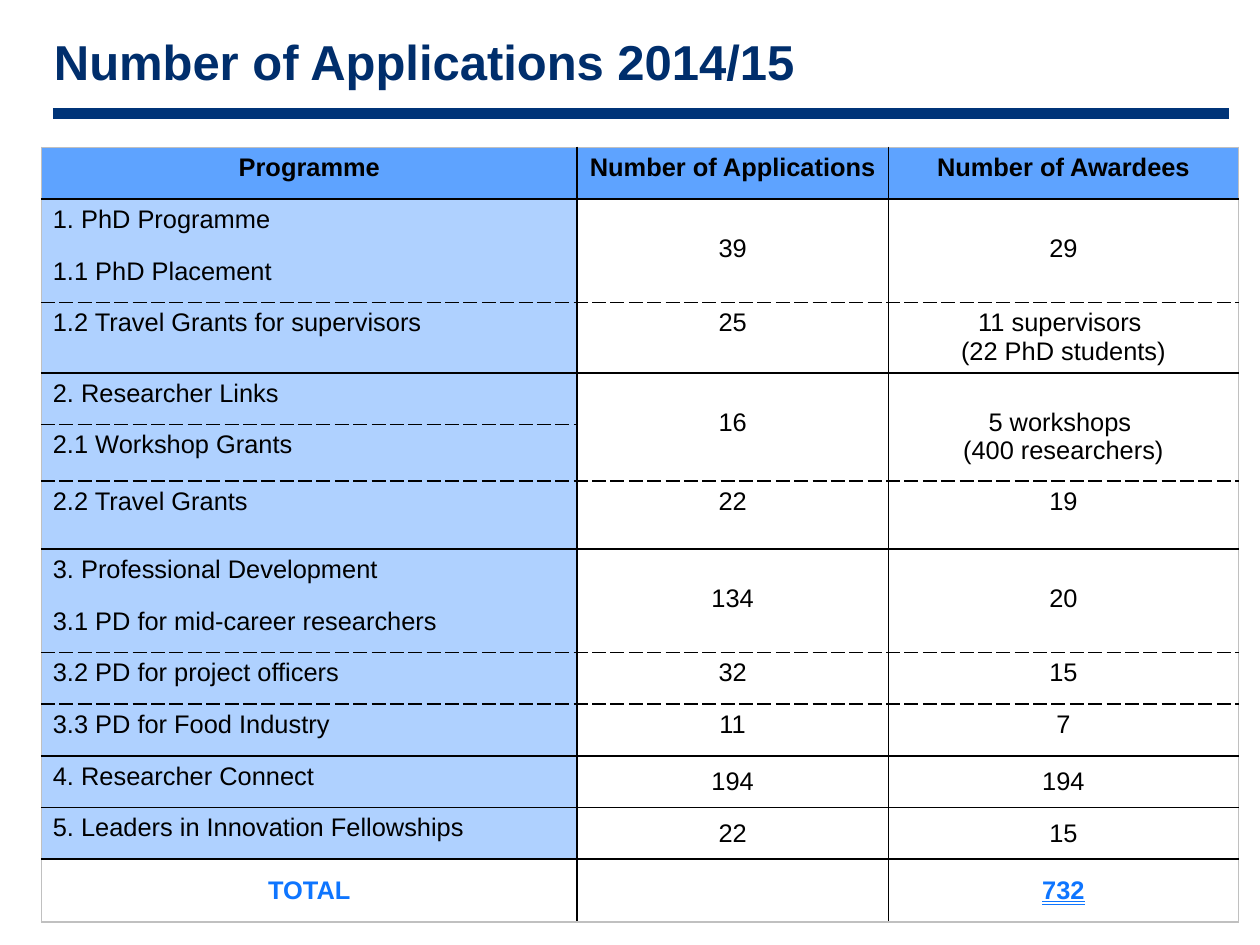
import pptx
import pptx.dml.color
import pptx.enum.shapes
import pptx.enum.text
import pptx.oxml
import pptx.oxml.ns
import pptx.util
from pptx.util import Inches

CENTER = pptx.enum.text.PP_ALIGN.CENTER
LEFT = pptx.enum.text.PP_ALIGN.LEFT
MIDDLE = pptx.enum.text.MSO_ANCHOR.MIDDLE
TOP = pptx.enum.text.MSO_ANCHOR.TOP
DOUBLE = pptx.enum.text.MSO_UNDERLINE.DOUBLE_LINE

HEADER_BLUE, LABEL_BLUE, TOTAL_BLUE = "5EA3FF", "AFD1FF", "0E75FF"
SOLID, DASH, FRAME, NONE = ("000000", "solid"), ("000000", "sysDash"), ("C0C0C0", "solid"), None

COLUMN_WIDTHS = [4.25, 2.47, 2.78]
ROW_HEIGHT = 0.41
TALL_ROWS = {3: 0.56, 5: 0.45, 6: 0.54, 13: 0.5}
MERGED_STARTS = (1, 4, 7)

# Each row: programme, applications, awardees, line below the row
ROWS = [
    ("Programme", "Number of Applications", "Number of Awardees", SOLID),
    ("1. PhD Programme", "39", "29", NONE),
    ("1.1 PhD Placement", "", "", DASH),
    ("1.2 Travel Grants for supervisors", "25", "11 supervisors \n(22 PhD students)", SOLID),
    ("2. Researcher Links", "16", "5 workshops \n(400 researchers)", DASH),
    ("2.1 Workshop Grants", "", "", DASH),
    ("2.2 Travel Grants", "22", "19", SOLID),
    ("3. Professional Development", "134", "20", NONE),
    ("3.1 PD for mid-career researchers", "", "", DASH),
    ("3.2 PD for project officers", "32", "15", DASH),
    ("3.3 PD for Food Industry", "11", "7", SOLID),
    ("4. Researcher Connect", "194", "194", SOLID),
    ("5. Leaders in Innovation Fellowships", "22", "15", SOLID),
    ("TOTAL", "", "732", FRAME),
]
TOTAL_ROW = len(ROWS) - 1


def rgb(value):
    return pptx.dml.color.RGBColor.from_string(value)


def add_text(paragraph, text, size, color, bold=False, underline=None):
    """Add one run per line of text, with line breaks between them."""
    for index, line in enumerate(text.split("\n")):
        if index:
            paragraph.add_line_break()
        run = paragraph.add_run()
        run.text = line
        run.font.name = "Arial"
        run.font.size = pptx.util.Pt(size)
        run.font.bold = bold
        run.font.underline = underline
        run.font.color.rgb = rgb(color)


def add_title(slide, text):
    box = slide.shapes.add_textbox(Inches(0.33), Inches(0.05), Inches(9.3), Inches(0.87))
    frame = box.text_frame
    frame.word_wrap = True
    frame.vertical_anchor = MIDDLE
    add_text(frame.paragraphs[0], text, 28, "002E6C", bold=True)


def add_rule(slide):
    line = slide.shapes.add_connector(
        pptx.enum.shapes.MSO_CONNECTOR.STRAIGHT,
        Inches(0.42), Inches(0.9), Inches(9.75), Inches(0.9))
    line.line.color.rgb = rgb("003478")
    line.line.width = pptx.util.Pt(6)
    properties = line._element.spPr
    properties.append(pptx.oxml.parse_xml(
        f"<a:effectLst {pptx.oxml.ns.nsdecls('a')}/>"))


def set_borders(cell, left, right, top, bottom):
    """Write the four borders, in the order the file format asks for."""
    properties = cell._tc.get_or_add_tcPr()
    for side, border in zip("LRTB", (left, right, top, bottom)):
        if border is NONE:
            content = "<a:noFill/>"
        else:
            color, dash = border
            content = (f'<a:solidFill><a:srgbClr val="{color}"/></a:solidFill>'
                       f'<a:prstDash val="{dash}"/>')
        properties.append(pptx.oxml.parse_xml(
            f'<a:ln{side} {pptx.oxml.ns.nsdecls("a")} w="12700">{content}</a:ln{side}>'))


def line_below(row, column):
    inside_merge = column > 0 and row in MERGED_STARTS
    return NONE if inside_merge else ROWS[row][3]


def style_cell(cell, row, column):
    merged = column > 0 and row in MERGED_STARTS
    set_borders(
        cell,
        FRAME if column == 0 else SOLID,
        FRAME if column == 2 else SOLID,
        FRAME if row == 0 else line_below(row - 1, column),
        line_below(row + 1 if merged else row, column))
    if row == 0 or (column == 0 and row < TOTAL_ROW):
        cell.fill.solid()
        cell.fill.fore_color.rgb = rgb(LABEL_BLUE if row else HEADER_BLUE)
    else:
        cell.fill.background()
    cell.margin_left = cell.margin_right = Inches(0.09)
    cell.margin_bottom = Inches(0.05)
    cell.margin_top = Inches(0.28 if merged else 0.05)
    centred_row = row == TOTAL_ROW or (row >= 11 and column > 0)
    cell.vertical_anchor = MIDDLE if centred_row else TOP


def fill_cell(cell, text, row, column):
    paragraph = cell.text_frame.paragraphs[0]
    is_label = column == 0 and 0 < row < TOTAL_ROW
    paragraph.alignment = LEFT if is_label else CENTER
    if text:
        is_total = row == TOTAL_ROW
        add_text(paragraph, text, 14.5, TOTAL_BLUE if is_total else "000000",
                 bold=row in (0, TOTAL_ROW),
                 underline=DOUBLE if is_total and column == 2 else None)


def add_programme_table(slide):
    heights = [TALL_ROWS.get(row, ROW_HEIGHT) for row in range(len(ROWS))]
    table = slide.shapes.add_table(
        len(ROWS), len(COLUMN_WIDTHS), Inches(0.33), Inches(1.17),
        Inches(sum(COLUMN_WIDTHS)), Inches(sum(heights))).table
    table.first_row = table.horz_banding = False
    for column, width in zip(table.columns, COLUMN_WIDTHS):
        column.width = Inches(width)
    for row, height in zip(table.rows, heights):
        row.height = Inches(height)
    for start in MERGED_STARTS:
        for column in (1, 2):
            table.cell(start, column).merge(table.cell(start + 1, column))
    for row, (*texts, _) in enumerate(ROWS):
        for column, text in enumerate(texts):
            cell = table.cell(row, column)
            style_cell(cell, row, column)
            fill_cell(cell, text, row, column)


def main():
    presentation = pptx.Presentation()
    presentation.slide_width = Inches(10)
    presentation.slide_height = Inches(7.5)
    slide = presentation.slides.add_slide(presentation.slide_layouts[6])
    add_rule(slide)
    add_programme_table(slide)
    add_title(slide, "Number of Applications 2014/15")
    presentation.save("out.pptx")


if __name__ == "__main__":
    main()
